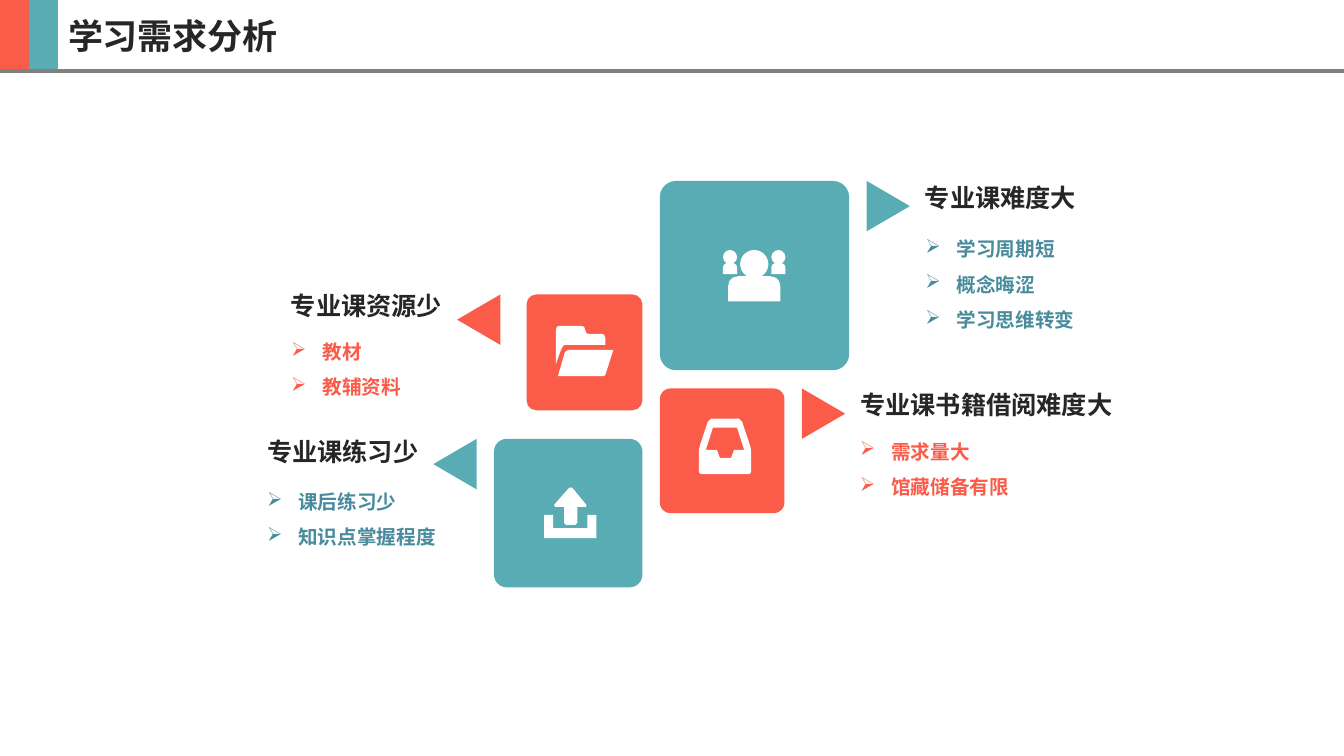
from dataclasses import dataclass
from typing import Callable

from lxml import etree
from pptx import Presentation
from pptx.dml.color import RGBColor
from pptx.enum.shapes import MSO_CONNECTOR, MSO_SHAPE
from pptx.enum.text import MSO_ANCHOR, MSO_AUTO_SIZE, PP_ALIGN
from pptx.oxml.ns import qn
from pptx.util import Cm, Pt

CORAL = RGBColor(0xFB, 0x5B, 0x49)
TEAL = RGBColor(0x59, 0xAC, 0xB4)
DEEP_TEAL = RGBColor(0x49, 0x8B, 0x9C)
INK = RGBColor(0x26, 0x26, 0x26)
GRAY = RGBColor(0x80, 0x80, 0x80)
WHITE = RGBColor(0xFF, 0xFF, 0xFF)

RECTANGLE = MSO_SHAPE.RECTANGLE
ROUNDED = MSO_SHAPE.ROUNDED_RECTANGLE
TRIANGLE = MSO_SHAPE.ISOSCELES_TRIANGLE
OVAL = MSO_SHAPE.OVAL
SHOULDERS = MSO_SHAPE.ROUND_2_SAME_RECTANGLE
STRAIGHT = MSO_CONNECTOR.STRAIGHT
MIDDLE = MSO_ANCHOR.MIDDLE
NO_AUTOFIT = MSO_AUTO_SIZE.NONE
LEFT, RIGHT, JUSTIFY = PP_ALIGN.LEFT, PP_ALIGN.RIGHT, PP_ALIGN.JUSTIFY

BODY_FONT = "Noto Sans CJK SC"
TITLE_FONT = "Noto Sans CJK JP"

PAGE_WIDTH, PAGE_HEIGHT = Cm(33.87), Cm(19.05)
LEFT_TILES_END, RIGHT_TILES_START = Cm(16.19), Cm(16.63)
POINTER_BASE, POINTER_LENGTH = Cm(1.27), Cm(1.09)
HEADING_GAP, HEADING_WIDTH, HEADING_HEIGHT = Cm(0.38), Cm(8.64), Cm(1.17)
LIST_INDENT = Cm(0.79)
ICON_UNIT = Cm(0.0254)

FOLDER = [
    [(12, 19), (9, 19), (7, 20), (5, 24), (0, 38), (0, 4), (1, 1), (4, 0), (25, 0),
     (28, 1), (29, 4), (30, 7), (32, 8), (46, 8), (48, 9), (49, 12), (49, 19)],
    [(57, 24), (49, 49), (47, 50), (2, 50), (9, 26), (12, 24)],
]
TRAY = [
    [(51, 27), (52, 32), (52, 53), (50, 55), (2, 55), (0, 53), (0, 32), (1, 27),
     (9, 3), (12, 0), (40, 0), (43, 3)],
    [(7, 31), (18, 31), (21, 39), (32, 39), (35, 31), (45, 31), (38, 9), (14, 9)],
]
UPLOAD = [
    [(0, 27), (9, 27), (9, 40), (43, 40), (43, 27), (52, 27), (52, 50), (0, 50)],
    [(42, 17), (42, 19), (33, 19), (33, 35), (31, 37), (22, 37), (20, 35), (20, 19),
     (11, 19), (10, 17), (25, 0), (28, 0)],
]
# Head (left, top, size) and body (left, top, width, height) of each person
PEOPLE = [
    ((0, 0, 14), (0, 13, 14, 11)),
    ((17, 0, 28), (5, 26, 52, 25)),
    ((48, 0, 14), (48, 13, 14, 11)),
]


@dataclass
class Topic:
    heading: str
    points: list
    on_left: bool
    top: int
    size: int
    fill: RGBColor
    point_color: RGBColor
    draw_icon: Callable
    icon: list
    icon_left: int
    icon_top: int
    heading_rise: int
    list_left: int
    list_drop: int
    list_height: int
    pointer_gap: int = Cm(0.44)


def paint(shape, color):
    shape.shadow.inherit = False
    shape.fill.solid()
    shape.fill.fore_color.rgb = color
    shape.line.fill.background()


def add_block(page, kind, left, top, width, height, color):
    block = page.shapes.add_shape(kind, left, top, width, height)
    paint(block, color)
    return block


def style(para, name, size, color):
    """Set the paragraph font for Latin and East Asian text alike."""
    font = para.font
    font.size, font.bold = Pt(size), True
    font.color.rgb = color
    font.name = name
    defaults = para._p.get_or_add_pPr().find(qn("a:defRPr"))
    etree.SubElement(defaults, qn("a:ea"), typeface=name)


def add_text_frame(page, left, top, width, height):
    frame = page.shapes.add_textbox(left, top, width, height).text_frame
    frame.word_wrap = True
    frame.vertical_anchor = MIDDLE
    frame.margin_left = frame.margin_right = frame.margin_top = frame.margin_bottom = 0
    return frame


def add_bullet(para):
    props = para._p.get_or_add_pPr()
    props.set("marL", str(LIST_INDENT))
    props.set("indent", str(-LIST_INDENT))
    etree.SubElement(props, qn("a:buChar"), char="➢")


def draw_outlines(page, left, top, outlines):
    first, *others = outlines
    builder = page.shapes.build_freeform(*first[0], scale=ICON_UNIT)
    builder.add_line_segments(first[1:])
    for outline in others:
        builder.move_to(*outline[0])
        builder.add_line_segments(outline[1:])
    paint(builder.convert_to_shape(left, top), WHITE)


def draw_people(page, left, top, people):
    for (head_x, head_y, size), body in people:
        for kind, (x, y, width, height) in ((OVAL, (head_x, head_y, size, size)), (SHOULDERS, body)):
            part = add_block(page, kind, left + x * ICON_UNIT, top + y * ICON_UNIT,
                             width * ICON_UNIT, height * ICON_UNIT, WHITE)
            if kind == SHOULDERS:
                part.adjustments[0] = 0.4


def add_header(page, left, top, width, height):
    band = Cm(0.73)
    for index, color in enumerate((CORAL, TEAL)):
        add_block(page, RECTANGLE, left + index * band, top, band, height, color)
    rule = page.shapes.add_connector(STRAIGHT, left, top + height, left + width, top + height)
    rule.line.color.rgb = GRAY
    rule.line.width = Pt(3)
    etree.SubElement(rule._element.spPr, qn("a:effectLst"))

    title = page.shapes.title
    title.left, title.top = left + 2 * band, top + Cm(0.23)
    title.width, title.height = Cm(6.3), Cm(1.32)
    frame = title.text_frame
    frame.text = "学习需求分析"
    frame.auto_size = NO_AUTOFIT
    frame.vertical_anchor = MIDDLE
    frame.paragraphs[0].alignment = LEFT
    style(frame.paragraphs[0], TITLE_FONT, 25, INK)


def add_topic(page, topic):
    """Place tile, pointer and texts outwards from the central gutter."""
    top, size = topic.top, topic.size
    if topic.on_left:
        tile_left = LEFT_TILES_END - size
        pointer_left = tile_left - topic.pointer_gap - POINTER_LENGTH
        heading_left = pointer_left - HEADING_GAP - HEADING_WIDTH
    else:
        tile_left = RIGHT_TILES_START
        pointer_left = tile_left + size + topic.pointer_gap
        heading_left = pointer_left + POINTER_LENGTH + HEADING_GAP

    tile = add_block(page, ROUNDED, tile_left, top, size, size, topic.fill)
    tile.adjustments[0] = 0.085
    topic.draw_icon(page, tile_left + topic.icon_left, top + topic.icon_top, topic.icon)

    turn = (POINTER_BASE - POINTER_LENGTH) // 2
    pointer = add_block(page, TRIANGLE, pointer_left - turn, top + turn,
                        POINTER_BASE, POINTER_LENGTH, topic.fill)
    pointer.rotation = 270 if topic.on_left else 90

    heading = add_text_frame(page, heading_left, top - topic.heading_rise,
                             HEADING_WIDTH, HEADING_HEIGHT).paragraphs[0]
    heading.text = topic.heading
    heading.alignment = RIGHT if topic.on_left else LEFT
    style(heading, BODY_FONT, 18, INK)

    frame = add_text_frame(page, topic.list_left, top + topic.list_drop, Cm(4.4), topic.list_height)
    frame.text = "\n".join(topic.points)
    for para in frame.paragraphs:
        para.alignment = JUSTIFY
        para.line_spacing = 1.5
        add_bullet(para)
        style(para, BODY_FONT, 14, topic.point_color)


TOPICS = [
    Topic("专业课资源少", ["教材", "教辅资料"], True, Cm(7.42), Cm(2.92), CORAL, CORAL,
          draw_outlines, FOLDER, Cm(0.74), Cm(0.79), Cm(0.3), Cm(7.34), Cm(0.76), Cm(1.96), Cm(0.66)),
    Topic("专业课难度大", ["学习周期短", "概念晦涩", "学习思维转变"], False, Cm(4.56), Cm(4.77), TEAL, DEEP_TEAL,
          draw_people, PEOPLE, Cm(1.59), Cm(1.74), Cm(0.17), Cm(23.32), Cm(1.26), Cm(2.39)),
    Topic("专业课书籍借阅难度大", ["需求量大", "馆藏储备有限"], False, Cm(9.79), Cm(3.14), CORAL, CORAL,
          draw_outlines, TRAY, Cm(0.98), Cm(0.76), Cm(0.19), Cm(21.67), Cm(0.9), Cm(1.96)),
    Topic("专业课练习少", ["课后练习少", "知识点掌握程度"], True, Cm(11.06), Cm(3.74), TEAL, DEEP_TEAL,
          draw_outlines, UPLOAD, Cm(1.26), Cm(1.23), Cm(0.26), Cm(6.73), Cm(0.9), Cm(1.96)),
]


def main():
    deck = Presentation()
    deck.slide_width, deck.slide_height = PAGE_WIDTH, PAGE_HEIGHT
    page = deck.slides.add_slide(deck.slide_layouts.get_by_name("Title Only"))
    add_header(page, 0, 0, PAGE_WIDTH, Cm(1.78))
    for topic in TOPICS:
        add_topic(page, topic)
    deck.save("out.pptx")


if __name__ == "__main__":
    main()
